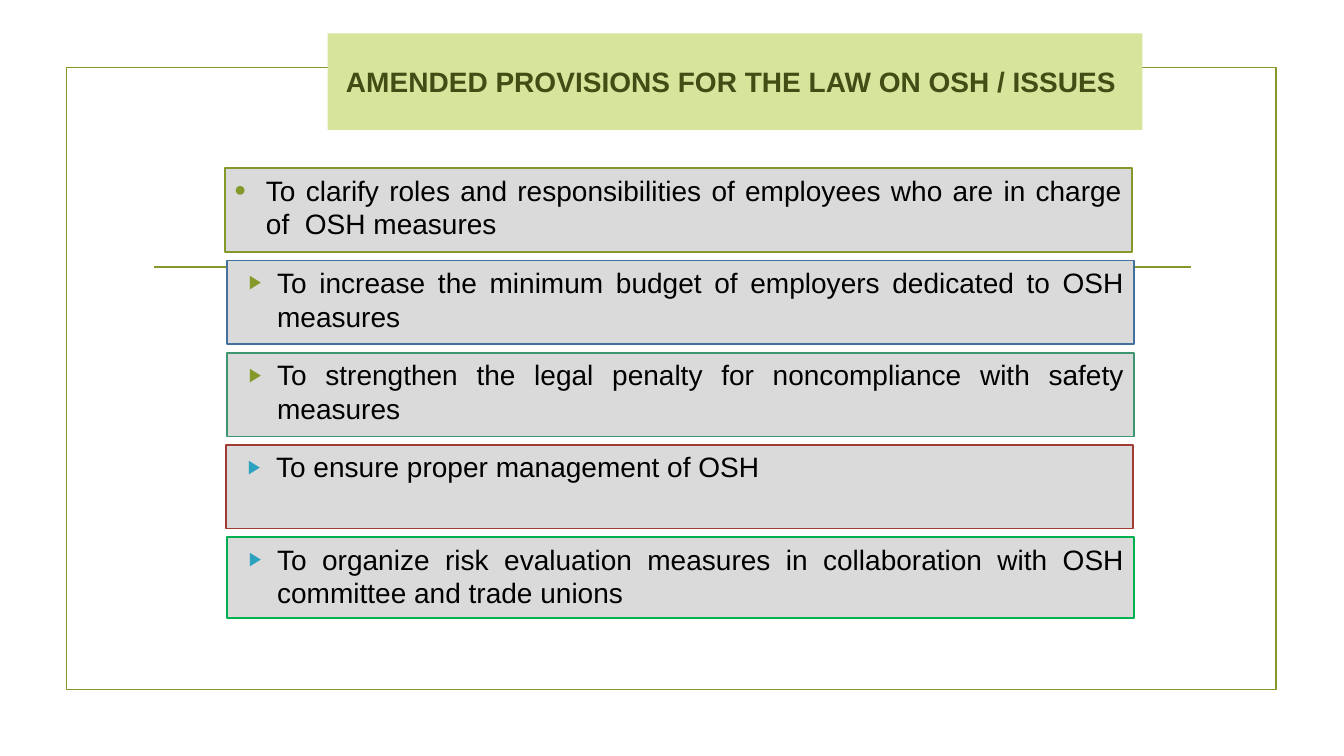
from dataclasses import dataclass

from lxml import etree
from pptx import Presentation
from pptx import util as u
from pptx.dml.color import RGBColor
from pptx.enum import shapes, text
from pptx.oxml import ns

COLORS = {
    "olive": "83992A", "lime": "D6E49C", "moss": "414D15", "grey": "DADADA",
    "black": "000000", "blue": "44709D", "teal": "3C9770", "red": "A23C33",
    "green": "00B050", "cyan": "2DA2BF",
}
FONT = "Arial"
LINE_WIDTH = u.Pt(1.25)
FIRST_TOP, ROW_STEP = 1.67, 0.915


@dataclass(frozen=True)
class Bullet:
    """A bullet glyph with its size in percent and its indents in inches."""
    glyph: str
    percent: int
    margin: float
    hang: float


@dataclass(frozen=True)
class Provision:
    """One bordered row of the list."""
    wording: str
    border: str
    bullet_color: str = "olive"
    left: float = 2.25
    height: float = 0.83
    bullet: Bullet = Bullet("▶", 68, 0.4, 0.28)


PROVISIONS = [
    Provision("To clarify roles and responsibilities of employees who are in charge of  OSH measures",
              "olive", left=2.23, bullet=Bullet("•", 115, 0.31, 0.31)),
    Provision("To increase the minimum budget of employers dedicated to OSH measures", "blue"),
    Provision("To strengthen the legal penalty for noncompliance with safety measures", "teal"),
    Provision("To ensure proper management of OSH", "red", "cyan", left=2.24),
    Provision("To organize risk evaluation measures in collaboration with OSH committee and trade unions",
              "green", "cyan", height=0.8),
]


def rgb(name: str) -> RGBColor:
    """Return the named colour."""
    return RGBColor.from_string(COLORS[name])


def add_box(slide, left: float, top: float, width: float, height: float, border: str):
    """Add an outlined rectangle without fill or shadow."""
    shape = slide.shapes.add_shape(shapes.MSO_SHAPE.RECTANGLE, u.Inches(left), u.Inches(top),
                                   u.Inches(width), u.Inches(height))
    shape.shadow.inherit = False
    shape.fill.background()
    shape.line.color.rgb = rgb(border)
    shape.line.width = LINE_WIDTH
    return shape


def add_rule(slide, left: float, right: float, top: float) -> None:
    """Add the horizontal rule behind the list."""
    rule = slide.shapes.add_connector(shapes.MSO_CONNECTOR.STRAIGHT, u.Inches(left), u.Inches(top),
                                      u.Inches(right), u.Inches(top))
    rule.line.color.rgb = rgb("olive")
    rule.line.width = LINE_WIDTH
    etree.SubElement(rule.element.spPr, ns.qn("a:effectLst"))


def add_run(paragraph, wording: str, color: str, bold: bool = False) -> None:
    """Add one run in the slide's font."""
    run = paragraph.add_run()
    run.text = wording
    run.font.name = FONT
    run.font.size = u.Pt(20)
    run.font.bold = bold
    run.font.color.rgb = rgb(color)


def set_bullet(paragraph, bullet: Bullet, color: str) -> None:
    """Give a paragraph a hanging bullet."""
    properties = paragraph._p.get_or_add_pPr()
    properties.set("marL", str(u.Inches(bullet.margin)))
    properties.set("indent", str(-u.Inches(bullet.hang)))
    bullet_color = etree.SubElement(properties, ns.qn("a:buClr"))
    etree.SubElement(bullet_color, ns.qn("a:srgbClr"), val=COLORS[color])
    etree.SubElement(properties, ns.qn("a:buSzPct"), val=str(bullet.percent * 1000))
    etree.SubElement(properties, ns.qn("a:buFont"), typeface=FONT)
    etree.SubElement(properties, ns.qn("a:buChar"), char=bullet.glyph)


def add_provision(slide, provision: Provision, top: float) -> None:
    """Add one row of the list."""
    shape = add_box(slide, provision.left, top, 9, provision.height, provision.border)
    shape.fill.solid()
    shape.fill.fore_color.rgb = rgb("grey")
    frame = shape.text_frame
    frame.word_wrap = True
    frame.vertical_anchor = text.MSO_ANCHOR.TOP
    paragraph = frame.paragraphs[0]
    set_bullet(paragraph, provision.bullet, provision.bullet_color)
    paragraph.alignment = text.PP_ALIGN.JUSTIFY
    add_run(paragraph, provision.wording, "black")


def place_title(slide) -> None:
    """Format the title and bring it in front of the frame."""
    title = slide.shapes.title
    title.left, title.top = u.Inches(3.25), u.Inches(0.33)
    title.width, title.height = u.Inches(8.08), u.Inches(0.96)
    title.fill.solid()
    title.fill.fore_color.rgb = rgb("lime")
    frame = title.text_frame
    frame.word_wrap = True
    frame.auto_size = text.MSO_AUTO_SIZE.NONE
    frame.vertical_anchor = text.MSO_ANCHOR.MIDDLE
    paragraph = frame.paragraphs[0]
    paragraph.alignment = text.PP_ALIGN.CENTER
    add_run(paragraph, "AMENDED PROVISIONS FOR THE LAW ON OSH / ISSUES ", "moss", bold=True)
    title.element.getparent().append(title.element)


def main() -> None:
    """Build and save the slide."""
    presentation = Presentation()
    presentation.slide_width = u.Inches(13.33)
    presentation.slide_height = u.Inches(7.5)
    slide = presentation.slides.add_slide(presentation.slide_layouts.get_by_name("Title Only"))
    add_box(slide, 0.66, 0.67, 12, 6.17, "olive")
    add_rule(slide, 1.53, 11.81, 2.65)
    place_title(slide)
    for row, provision in enumerate(PROVISIONS):
        add_provision(slide, provision, FIRST_TOP + row * ROW_STEP)
    presentation.save("out.pptx")


if __name__ == "__main__":
    main()
